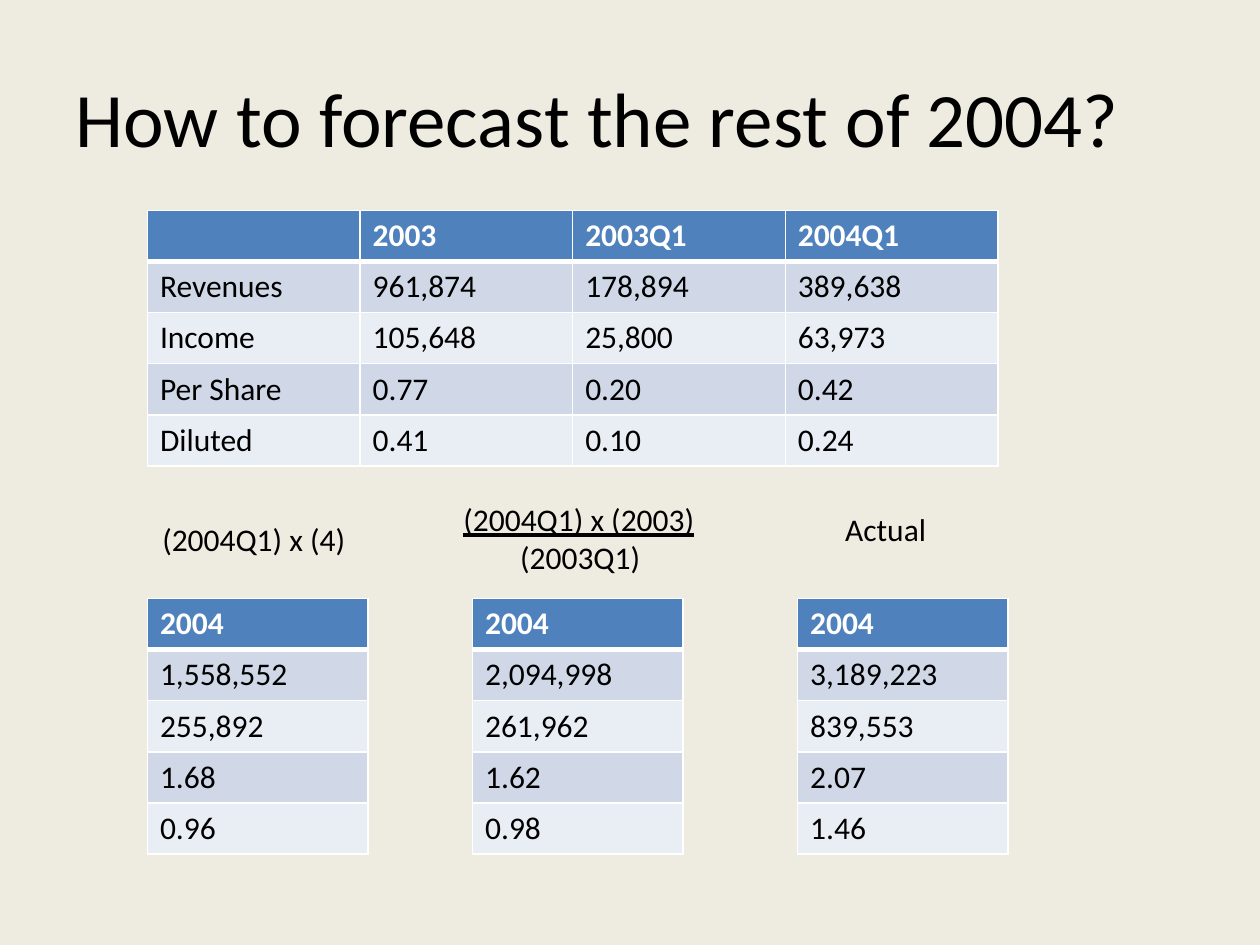
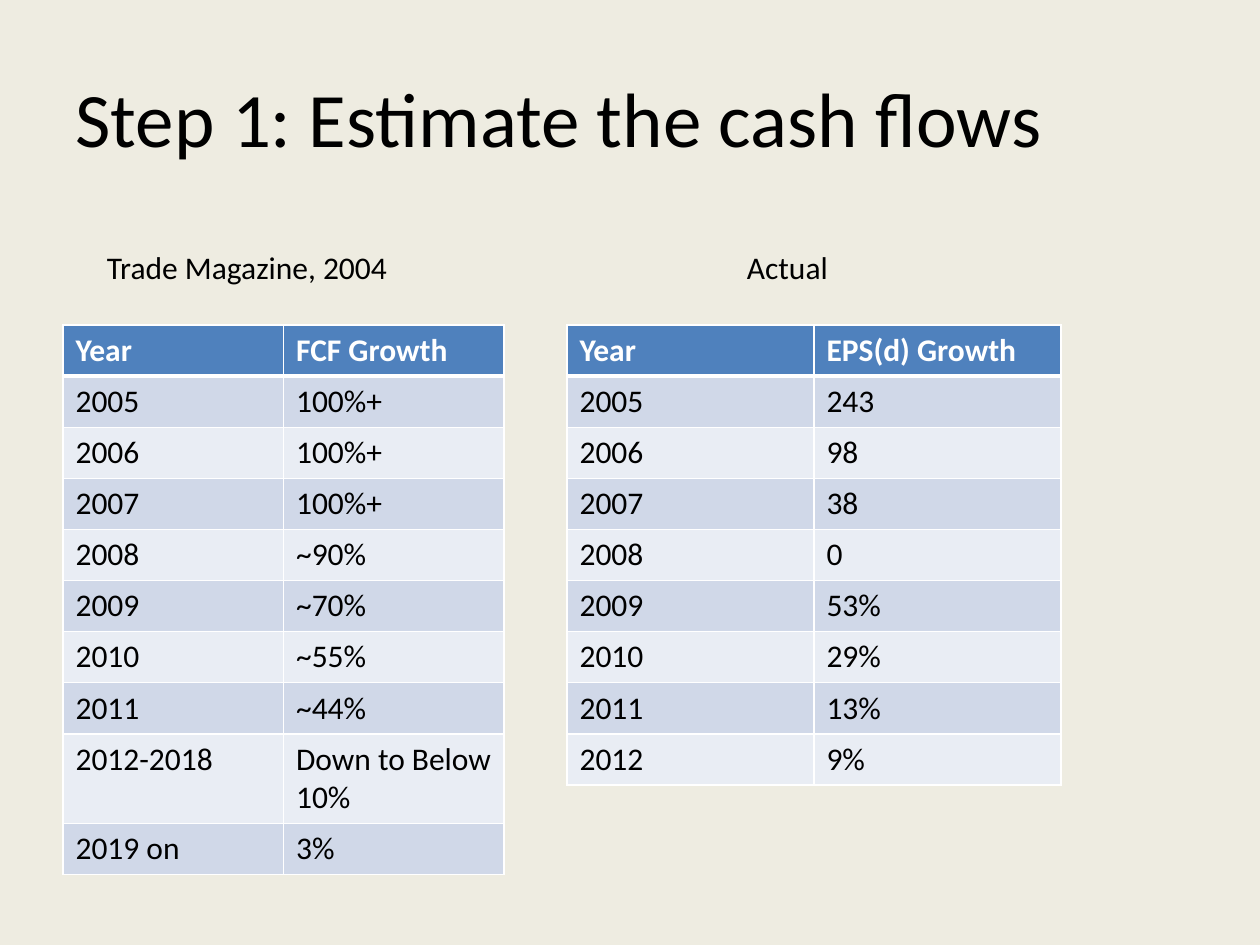
"""Build two slides on forecasting 2004 results and estimating cash flows."""
from dataclasses import dataclass

import lxml.etree
import pptx
import pptx.dml.color
import pptx.enum.text
import pptx.oxml.ns
import pptx.presentation
import pptx.slide
import pptx.table
import pptx.text.text
import pptx.util

Inches = pptx.util.Inches
Pt = pptx.util.Pt
RGBColor = pptx.dml.color.RGBColor

BACKGROUND = RGBColor(0xEE, 0xEC, 0xE1)
HEADER = RGBColor(0x4F, 0x81, 0xBD)
BANDS = (RGBColor(0xE9, 0xED, 0xF4), RGBColor(0xD0, 0xD8, 0xE8))
BLACK = RGBColor(0, 0, 0)
WHITE = RGBColor(0xFF, 0xFF, 0xFF)

FONT = "Calibri"
TITLE_SIZE = Pt(44)
BODY_SIZE = Pt(18)
ROW_HEIGHT = Inches(0.4)
THIN = Pt(1)
THICK = Pt(3)
TITLE_ONLY = 5


@dataclass(frozen=True)
class CaptionLine:
    """A line of a caption with its indent."""

    text: str
    indent: float = 0
    underline: bool = False


@dataclass(frozen=True)
class Caption:
    """A text box above a table, in inches."""

    left: float
    top: float
    width: float
    height: float
    lines: tuple[CaptionLine, ...]
    wrap: bool = True


@dataclass(frozen=True)
class Grid:
    """A banded table with equal columns, in inches; its first row is the header."""

    left: float
    top: float
    width: float
    rows: tuple[tuple[str, ...], ...]


@dataclass(frozen=True)
class Page:
    """The content of one slide."""

    title: str
    captions: tuple[Caption, ...]
    grids: tuple[Grid, ...]


def column(*values: str) -> tuple[tuple[str, ...], ...]:
    """Turn values into the rows of a one-column table."""
    return tuple((value,) for value in values)


PAGES = (
    Page(
        "How to forecast the rest of 2004?",
        (
            Caption(1.08, 4.08, 2, 0.4, (CaptionLine("(2004Q1) x (4)", 0.11),)),
            Caption(3.58, 3.92, 2.42, 0.71, (
                CaptionLine("(2004Q1) x (2003)", underline=True),
                CaptionLine("(2003Q1)", 0.45),
            )),
            Caption(6.33, 4, 1.5, 0.42, (CaptionLine("Actual", 0.28),)),
        ),
        (
            Grid(1.17, 1.67, 6.75, (
                ("", "2003", "2003Q1", "2004Q1"),
                ("Revenues", "961,874", "178,894", "389,638"),
                ("Income", "105,648", "25,800", "63,973"),
                ("Per Share", "0.77", "0.20", "0.42"),
                ("Diluted", "0.41", "0.10", "0.24"),
            )),
            Grid(1.17, 4.75, 1.75, column("2004", "1,558,552", "255,892", "1.68", "0.96")),
            Grid(3.75, 4.75, 1.67, column("2004", "2,094,998", "261,962", "1.62", "0.98")),
            Grid(6.33, 4.75, 1.67, column("2004", "3,189,223", "839,553", "2.07", "1.46")),
        ),
    ),
    Page(
        "Step 1: Estimate the cash flows",
        (
            Caption(0.75, 1.92, 3, 0.4, (CaptionLine("Trade Magazine, 2004"),)),
            Caption(5.83, 1.92, 0.85, 0.4, (CaptionLine("Actual"),), wrap=False),
        ),
        (
            Grid(0.5, 2.58, 3.5, (
                ("Year", "FCF Growth"),
                ("2005", "100%+"),
                ("2006", "100%+"),
                ("2007", "100%+"),
                ("2008", "~90%"),
                ("2009", "~70%"),
                ("2010", "~55%"),
                ("2011", "~44%"),
                ("2012-2018", "Down to Below 10%"),
                ("2019 on", "3%"),
            )),
            Grid(4.5, 2.58, 3.92, (
                ("Year", "EPS(d) Growth"),
                ("2005", "243"),
                ("2006", "98"),
                ("2007", "38"),
                ("2008", "0"),
                ("2009", "53%"),
                ("2010", "29%"),
                ("2011", "13%"),
                ("2012", "9%"),
            )),
        ),
    ),
)


def set_font(paragraph: pptx.text.text._Paragraph, size: int = BODY_SIZE,
             color: RGBColor = BLACK, bold: bool = False) -> None:
    """Give a paragraph the deck's typeface."""
    font = paragraph.font
    font.name, font.size, font.bold = FONT, size, bold
    font.color.rgb = color


def add_title(slide: pptx.slide.Slide, text: str) -> None:
    """Fill and place the title placeholder."""
    title = slide.shapes.title
    title.left, title.top = Inches(0.5), Inches(0.3)
    title.width, title.height = Inches(9), Inches(1.25)
    title.text_frame.text = text
    title.text_frame.vertical_anchor = pptx.enum.text.MSO_ANCHOR.MIDDLE
    heading = title.text_frame.paragraphs[0]
    heading.alignment = pptx.enum.text.PP_ALIGN.LEFT
    set_font(heading, TITLE_SIZE)


def add_caption(slide: pptx.slide.Slide, caption: Caption) -> None:
    """Draw a caption with its indented lines."""
    frame = slide.shapes.add_textbox(
        Inches(caption.left), Inches(caption.top),
        Inches(caption.width), Inches(caption.height)).text_frame
    frame.word_wrap = caption.wrap
    frame.text = "\n".join(line.text for line in caption.lines)
    for paragraph, line in zip(frame.paragraphs, caption.lines):
        paragraph._p.get_or_add_pPr().set("marL", str(Inches(line.indent)))
        set_font(paragraph)
        paragraph.font.underline = line.underline


def add_borders(cell: pptx.table._Cell, top: int, bottom: int) -> None:
    """Outline a cell in white."""
    properties = cell._tc.get_or_add_tcPr()
    qn = pptx.oxml.ns.qn
    for side, width in (("L", THIN), ("R", THIN), ("T", top), ("B", bottom)):
        line = lxml.etree.SubElement(properties, qn(f"a:ln{side}"), w=str(width))
        fill = lxml.etree.SubElement(line, qn("a:solidFill"))
        lxml.etree.SubElement(fill, qn("a:srgbClr"), val=str(WHITE))


def add_grid(slide: pptx.slide.Slide, grid: Grid) -> None:
    """Draw a table with a header and alternating bands."""
    table = slide.shapes.add_table(
        len(grid.rows), len(grid.rows[0]), Inches(grid.left), Inches(grid.top),
        Inches(grid.width), ROW_HEIGHT * len(grid.rows)).table
    for row, values in enumerate(grid.rows):
        is_header = row == 0
        for col, value in enumerate(values):
            cell = table.cell(row, col)
            add_borders(cell, THICK if row == 1 else THIN, THICK if is_header else THIN)
            cell.fill.solid()
            cell.fill.fore_color.rgb = HEADER if is_header else BANDS[row % 2]
            cell.text = value
            set_font(cell.text_frame.paragraphs[0],
                     color=WHITE if is_header else BLACK, bold=is_header)


def add_page(deck: pptx.presentation.Presentation, page: Page) -> None:
    """Add one slide with its title, tables and captions."""
    slide = deck.slides.add_slide(deck.slide_layouts[TITLE_ONLY])
    add_title(slide, page.title)
    for grid in page.grids:
        add_grid(slide, grid)
    for caption in page.captions:
        add_caption(slide, caption)


def main() -> None:
    """Build and save the deck."""
    deck = pptx.Presentation()
    deck.slide_width, deck.slide_height = Inches(10), Inches(7.5)
    backdrop = deck.slide_master.background.fill
    backdrop.solid()
    backdrop.fore_color.rgb = BACKGROUND
    for page in PAGES:
        add_page(deck, page)
    deck.save("out.pptx")


if __name__ == "__main__":
    main()
